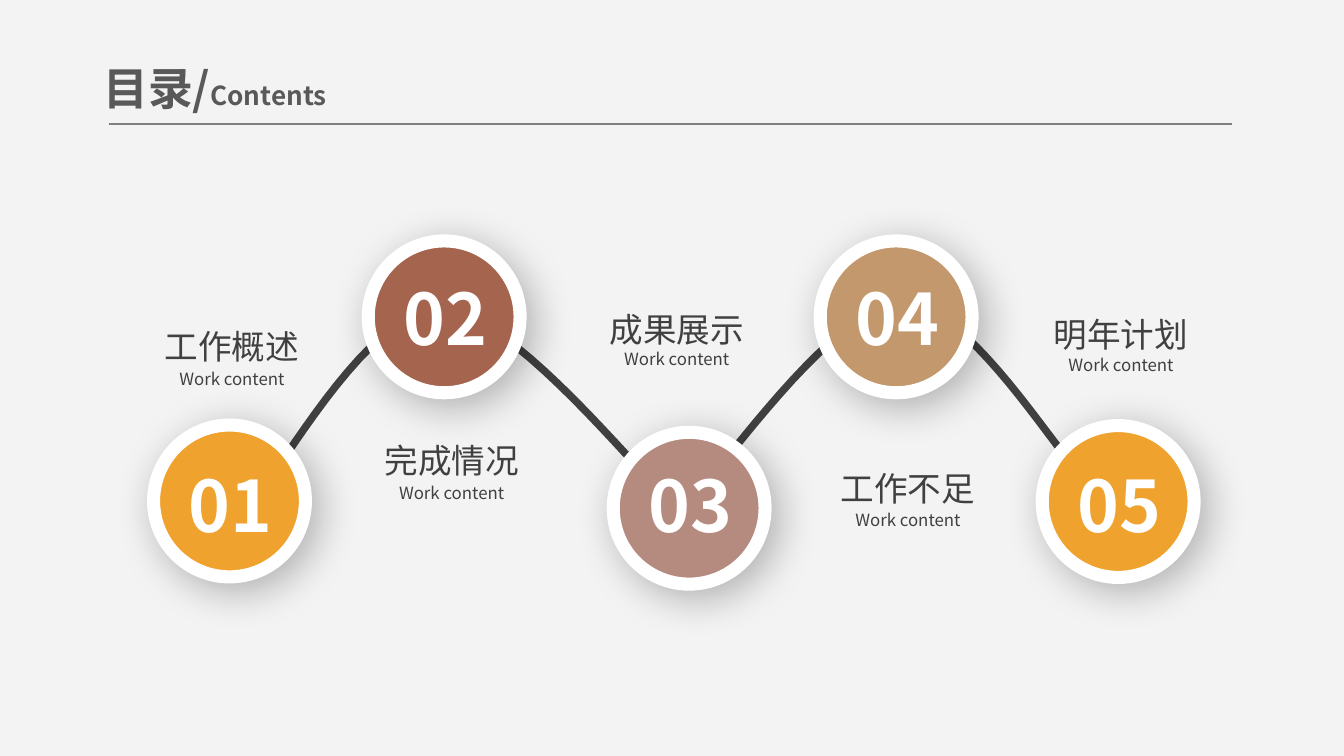
import pptx
import pptx.util
import pptx.dml.color
import pptx.enum.shapes
import pptx.enum.text
from lxml import etree
from pptx.oxml.ns import qn

COLS, ROWS = 100, 56.25
CELL = pptx.util.Inches(0.1)
FONT = "Noto Sans CJK SC"
DARK = "404040"

# number, fill, badge centre, number row, label, label centre, top and gap
STOPS = [
    ("01", "F0A22E", 17.08, 37.28, 37.4, "工作概述", 17.25, 23.85, 3.2),
    ("02", "A5644E", 33.05, 23.58, 23.5, "完成情况", 33.6, 32.35, 3.15),
    ("03", "B58B80", 51.28, 37.82, 37.4, "成果展示", 50.35, 22.6, 2.98),
    ("04", "C3986D", 66.68, 23.58, 23.5, "工作不足", 67.55, 34.4, 3.15),
    ("05", "F0A22E", 83.2, 37.32, 37.4, "明年计划", 83.4, 22.98, 2.98),
]

# Bezier knots and handles, in columns and rows
WAVE = [
    (18.1, 38.3),
    (20.5, 35.8), (27.2, 23), (32.7, 23),
    (38.1, 23), (47.9, 35.8), (50.9, 38.3),
    (54, 40.8), (48.2, 40.5), (50.9, 37.8),
    (53.6, 35.2), (61.9, 22.8), (67, 22.6),
    (72.1, 22.4), (78.5, 33.8), (81.6, 36.7),
]


def grid(*cells):
    return [round(n * CELL) for n in cells]


def tint(color, code):
    color.rgb = pptx.dml.color.RGBColor.from_string(code)


def style(run, size, code, bold=False):
    run.font.name, run.font.size, run.font.bold = FONT, pptx.util.Pt(size), bold
    tint(run.font.color, code)
    props = run.font._element
    etree.SubElement(props, qn("a:ea"), typeface=FONT)


def stroke(line, code, width):
    tint(line.color, code)
    line.width = pptx.util.Pt(width)


def shade(shape):
    """Add a soft shadow to the lower right."""
    shape.shadow.inherit = False
    effects = shape._element.spPr.find(qn("a:effectLst"))
    outer = etree.SubElement(
        effects, qn("a:outerShdw"), blurRad=str(pptx.util.Pt(22)),
        dist=str(pptx.util.Pt(6)), dir=str(45 * 60000), algn="tl", rotWithShape="0")
    black = etree.SubElement(outer, qn("a:srgbClr"), val="000000")
    etree.SubElement(black, qn("a:alpha"), val="28000")


def text(shapes, mid, top, wide, high, words, size, code, bold=False):
    """Place one centred line of text around the column mid."""
    box = shapes.add_textbox(*grid(mid - wide / 2, top, wide, high))
    frame = box.text_frame
    frame.word_wrap = True
    frame.margin_left = frame.margin_right = pptx.util.Inches(0.07)
    frame.margin_top = frame.margin_bottom = pptx.util.Inches(0.04)
    frame.text = words
    line = frame.paragraphs[0]
    line.alignment = pptx.enum.text.PP_ALIGN.CENTER
    style(line.runs[0], size, code, bold)


def header(shapes):
    box = shapes.add_textbox(*grid(6.7, 3.8, 24.7, 5.4))
    frame = box.text_frame
    frame.word_wrap = True
    frame.vertical_anchor = pptx.enum.text.MSO_ANCHOR.MIDDLE
    line = frame.paragraphs[0]
    for words, size in (("目录/", 24), ("Contents", 14)):
        run = line.add_run()
        run.text = words
        style(run, size, "595959", True)
    rule = shapes.add_connector(
        pptx.enum.shapes.MSO_CONNECTOR.STRAIGHT, *grid(8.1, 9.23, 91.7, 9.23))
    stroke(rule.line, "808080", 0.75)
    etree.SubElement(rule._element.spPr, qn("a:effectLst"))


def curve(knots, steps=20):
    """Return points along a chain of cubic Bezier pieces."""
    points = []
    for i in range(0, len(knots) - 1, 3):
        for step in range(1, steps + 1):
            t = step / steps
            parts = ((1 - t) ** 3, 3 * t * (1 - t) ** 2, 3 * t * t * (1 - t), t ** 3)
            points.append(grid(*(
                sum(p * knot[axis] for p, knot in zip(parts, knots[i:i + 4]))
                for axis in (0, 1))))
    return points


def wave(shapes):
    pen = shapes.build_freeform(*grid(*WAVE[0]))
    pen.add_line_segments(curve(WAVE), close=False)
    trail = pen.convert_to_shape()
    trail.fill.background()
    trail.shadow.inherit = False
    stroke(trail.line, DARK, 4)


def label(shapes, words, mid, top, gap):
    group = shapes.add_group_shape().shapes
    text(group, mid, top, 14.8, 3.8, words, 18, DARK)
    text(group, mid, top + gap, 12, 2.3, "Work content", 9, DARK)


def badge(shapes, number, code, mid, row, base):
    group = shapes.add_group_shape().shapes
    size = 11.3
    disc = group.add_shape(
        pptx.enum.shapes.MSO_SHAPE.OVAL,
        *grid(mid - size / 2, row - size / 2, size, size))
    disc.fill.solid()
    tint(disc.fill.fore_color, code)
    stroke(disc.line, "FFFFFF", 7)
    shade(disc)
    text(group, mid + 0.08, base - 3.45, 8.6, 6.9, number, 38, "FFFFFF", True)


def main():
    deck = pptx.Presentation()
    deck.slide_width, deck.slide_height = grid(COLS, ROWS)
    slide = deck.slides.add_slide(deck.slide_layouts[6])
    slide.background.fill.solid()
    tint(slide.background.fill.fore_color, "F3F3F3")
    shapes = slide.shapes
    header(shapes)
    wave(shapes)
    for number, code, mid, row, base, words, centre, top, gap in STOPS:
        label(shapes, words, centre, top, gap)
        badge(shapes, number, code, mid, row, base)
    deck.save("out.pptx")


if __name__ == "__main__":
    main()
